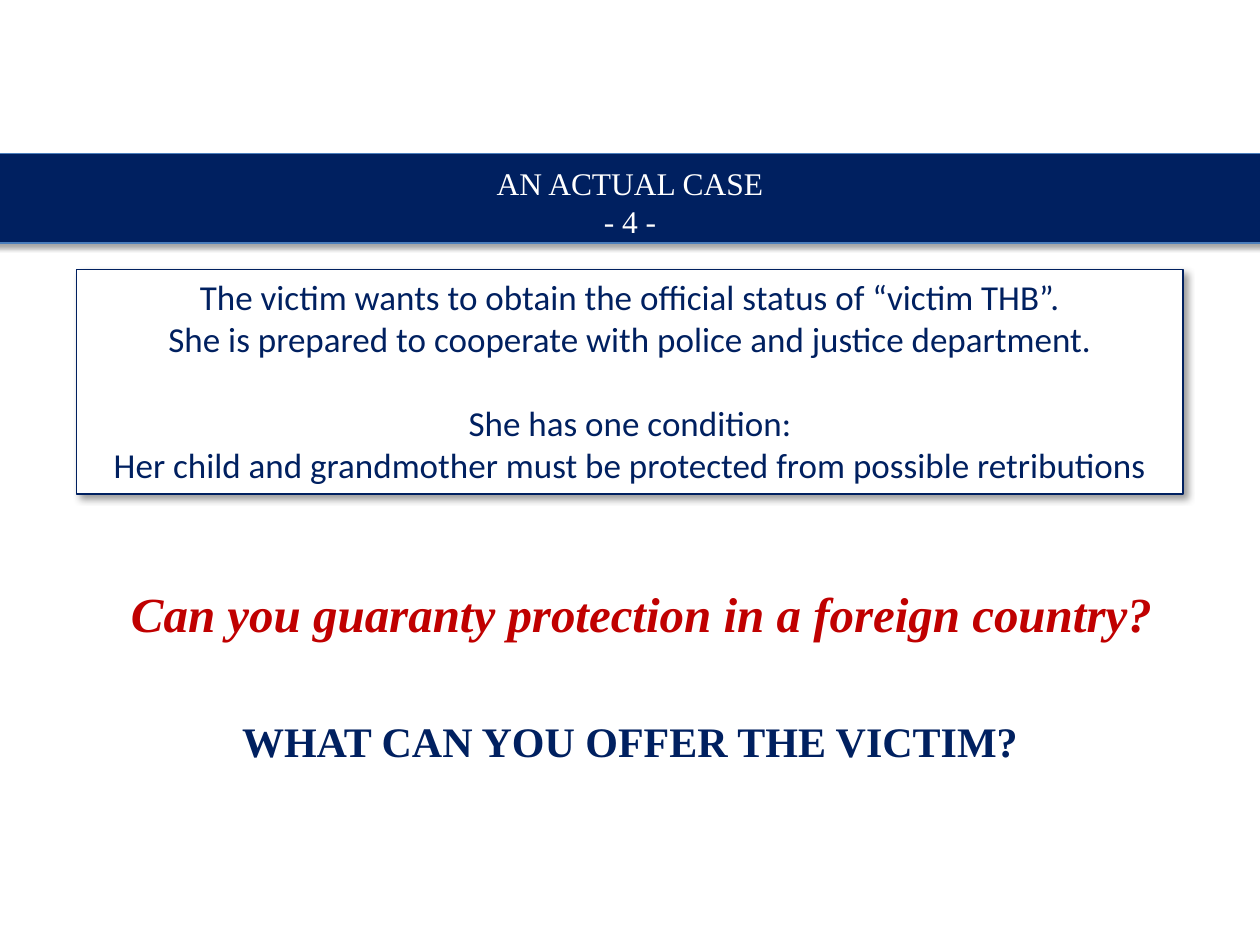
"""Build the slide about the victim's request for protection."""
from dataclasses import dataclass, field
from typing import Any

from lxml import etree
from pptx import Presentation
from pptx.dml.color import RGBColor
from pptx.enum.shapes import MSO_SHAPE
from pptx.enum.text import MSO_ANCHOR, PP_ALIGN
from pptx.oxml.ns import qn
from pptx.util import Inches, Pt

RECTANGLE = MSO_SHAPE.RECTANGLE
CENTER = PP_ALIGN.CENTER
TOP = MSO_ANCHOR.TOP
NAVY = RGBColor(0x00, 0x20, 0x60)
BLUE = RGBColor(0x4B, 0x7E, 0xBC)
RED = RGBColor(0xC0, 0x00, 0x00)
WHITE = RGBColor(0xFF, 0xFF, 0xFF)
SERIF = "Times New Roman"
SANS = "Calibri"


@dataclass(frozen=True)
class Box:
    left: float
    top: float
    width: float
    height: float

    def lengths(self) -> list[int]:
        return [Inches(n) for n in (self.left, self.top, self.width, self.height)]


@dataclass(frozen=True)
class Shadow:
    opacity: int
    blur: float
    distance: float
    angle: int


@dataclass(frozen=True)
class Panel:
    box: Box
    fill: RGBColor
    line: RGBColor
    shadow: Shadow


@dataclass(frozen=True)
class Message:
    lines: list[str]
    color: RGBColor
    font: dict[str, Any]
    gaps: dict[int, float] = field(default_factory=dict)


def add_shadow(shape: Any, shadow: Shadow) -> None:
    shape.shadow.inherit = False
    effects = shape._element.spPr.find(qn("a:effectLst"))
    outer = etree.SubElement(
        effects,
        qn("a:outerShdw"),
        blurRad=str(Pt(shadow.blur)),
        dist=str(Pt(shadow.distance)),
        dir=str(shadow.angle * 60000),
        rotWithShape="0",
    )
    color = etree.SubElement(outer, qn("a:srgbClr"), val="000000")
    etree.SubElement(color, qn("a:alpha"), val=str(shadow.opacity * 1000))


def add_panel(slide: Any, panel: Panel) -> Any:
    shape = slide.shapes.add_shape(RECTANGLE, *panel.box.lengths())
    shape.fill.solid()
    shape.fill.fore_color.rgb = panel.fill
    shape.line.color.rgb = panel.line
    shape.line.width = Pt(0.75)
    add_shadow(shape, panel.shadow)
    return shape


def write_message(shape: Any, message: Message) -> None:
    frame = shape.text_frame
    frame.word_wrap = True
    frame.vertical_anchor = TOP
    for index, line in enumerate(message.lines):
        paragraph = frame.add_paragraph() if index else frame.paragraphs[0]
        paragraph.alignment = CENTER
        paragraph.space_before = Pt(message.gaps.get(index, 0))
        run = paragraph.add_run()
        run.text = line
        run.font.color.rgb = message.color
        for name, value in message.font.items():
            setattr(run.font, name, value)


def add_message(slide: Any, box: Box, message: Message) -> None:
    write_message(slide.shapes.add_textbox(*box.lengths()), message)


REQUEST_PANEL = Panel(Box(0.61, 2.14, 8.78, 1.78), WHITE, NAVY, Shadow(40, 4, 3, 45))
TITLE_BAND = Panel(Box(-0.1, 1.22, 10.17, 0.71), NAVY, BLUE, Shadow(35, 3.1, 1.8, 90))
REQUEST = Message(
    [
        "The victim wants to obtain the official status of “victim THB”.",
        "She is prepared to cooperate with police and justice department.",
        "She has one condition:",
        "Her child and grandmother must be protected from possible retributions",
    ],
    NAVY,
    {"name": SANS, "size": Pt(20)},
    {2: 24},
)
QUESTION = Message(
    ["Can you guaranty protection in a foreign country?"],
    RED,
    {"name": SERIF, "size": Pt(28), "bold": True, "italic": True},
)
OFFER = Message(
    ["WHAT CAN YOU OFFER THE VICTIM?"],
    NAVY,
    {"name": SERIF, "size": Pt(24), "bold": True},
)
TITLE = Message(["AN ACTUAL CASE", "- 4 -"], WHITE, {"name": SERIF, "size": Pt(18)})


def main() -> None:
    presentation = Presentation()
    presentation.slide_width = Inches(10)
    presentation.slide_height = Inches(7.5)
    slide = presentation.slides.add_slide(presentation.slide_layouts[6])
    write_message(add_panel(slide, REQUEST_PANEL), REQUEST)
    add_message(slide, Box(0.5, 4.58, 9.18, 0.57), QUESTION)
    add_message(slide, Box(0.41, 5.63, 9.18, 0.5), OFFER)
    add_panel(slide, TITLE_BAND)
    add_message(slide, Box(0.41, 1.25, 9.18, 0.71), TITLE)
    presentation.save("out.pptx")


if __name__ == "__main__":
    main()
